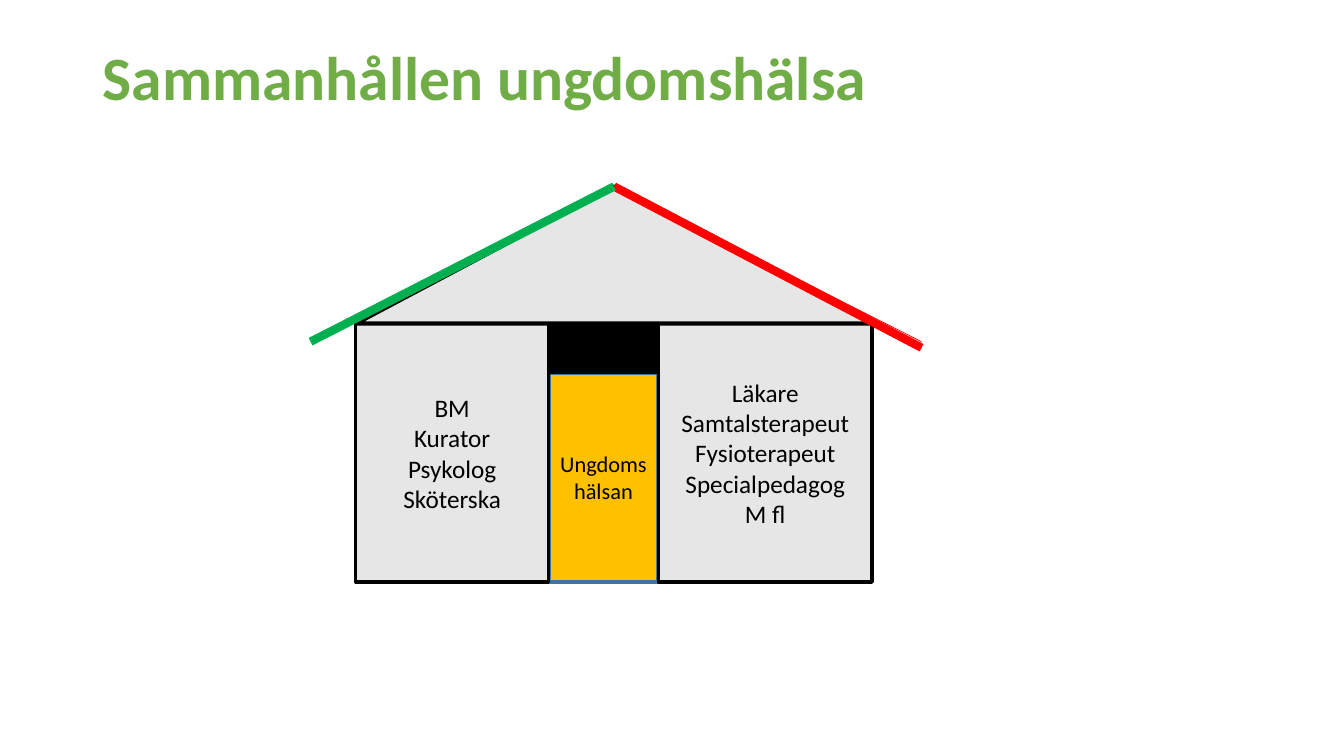
from lxml import etree
from pptx import Presentation
from pptx import util as u
from pptx.dml.color import RGBColor
from pptx.enum import shapes, text
from pptx.oxml.ns import qn

GREEN = RGBColor(0x70, 0xAD, 0x47)
ROOF_GREEN = RGBColor(0x00, 0xB0, 0x50)
RED = RGBColor(0xFF, 0x00, 0x00)
AMBER = RGBColor(0xFF, 0xC0, 0x00)
BLUE = RGBColor(0x43, 0x73, 0x9E)
GREY = RGBColor(0xE7, 0xE6, 0xE6)
BLACK = RGBColor(0x00, 0x00, 0x00)

LEFT, DOOR_LEFT, DOOR_RIGHT, RIGHT = 26.48, 40.81, 48.99, 64.89
TOP, EAVES, DOOR_TOP, GROUND = 24.67, 42.8, 49.3, 77
PEAK = (45.69, TOP)
RECT = shapes.MSO_SHAPE.RECTANGLE
TRIANGLE = shapes.MSO_SHAPE.ISOSCELES_TRIANGLE


class Deck:
    """Draws styled elements on one slide, with lengths in percent of its size."""

    def __init__(self, font):
        self.font = font
        self.prs = Presentation()
        self.prs.slide_width = u.Inches(13.33)
        self.prs.slide_height = u.Inches(7.5)
        self.s = self.prs.slides.add_slide(self.prs.slide_layouts[6])

    def point(self, x, y):
        return int(self.prs.slide_width * x / 100), int(self.prs.slide_height * y / 100)

    def box(self, left, top, right, bottom):
        return *self.point(left, top), *self.point(right - left, bottom - top)

    def label(self, sp, words, align, color, spacing=1.0, **style):
        tf = sp.text_frame
        tf.word_wrap = True
        tf.vertical_anchor = text.MSO_ANCHOR.MIDDLE
        tf.text = words
        for p in tf.paragraphs:
            p.alignment = align
            p.line_spacing = spacing
            for r in p.runs:
                r.font.color.rgb = color
                for name, value in {"name": self.font, **style}.items():
                    setattr(r.font, name, value)

    def title(self, words, *edges):
        sp = self.s.shapes.add_textbox(*self.box(*edges))
        self.label(sp, words, text.PP_ALIGN.LEFT, GREEN, 0.9, size=u.Pt(44), bold=True)

    def shape(self, kind, edges, fill, line, width, words="", size=18):
        sp = self.s.shapes.add_shape(kind, *self.box(*edges))
        sp.shadow.inherit = False
        sp.fill.solid()
        sp.fill.fore_color.rgb = fill
        sp.line.color.rgb = line
        sp.line.width = u.Pt(width)
        if words:
            self.label(sp, words, text.PP_ALIGN.CENTER, BLACK, size=u.Pt(size))

    def line(self, start, end, color, width):
        ln = self.s.shapes.add_connector(
            shapes.MSO_CONNECTOR.STRAIGHT, *self.point(*start), *self.point(*end))
        ln.line.color.rgb = color
        ln.line.width = u.Pt(width)
        etree.SubElement(ln._element.spPr, qn("a:effectLst"))


def main():
    deck = Deck("Calibri")
    deck.title("Sammanhållen ungdomshälsa", 6.9, 5.33, 93.17, 16)
    deck.shape(RECT, (DOOR_LEFT, DOOR_TOP, DOOR_RIGHT, GROUND), AMBER, BLUE, 3,
               "Ungdoms hälsan", 16)
    for left, right, staff in (
        (LEFT, DOOR_LEFT, "BM\nKurator\vPsykolog\vSköterska"),
        (DOOR_RIGHT, RIGHT, "Läkare\nSamtalsterapeut\nFysioterapeut\nSpecialpedagog\nM fl"),
    ):
        deck.shape(RECT, (left, EAVES, right, GROUND), GREY, BLACK, 2.25, staff)
    deck.shape(RECT, (DOOR_LEFT, EAVES, DOOR_RIGHT, DOOR_TOP), BLACK, BLACK, 2.25)
    deck.shape(TRIANGLE, (LEFT, TOP, RIGHT, EAVES), GREY, BLACK, 3)
    for end, color, width in (
        ((68.57, 46), RED, 6),
        ((23.11, 45.2), ROOF_GREEN, 6),
        ((68.57, 45.2), RED, 0.5),
    ):
        deck.line(PEAK, end, color, width)
    deck.prs.save("out.pptx")


if __name__ == "__main__":
    main()
